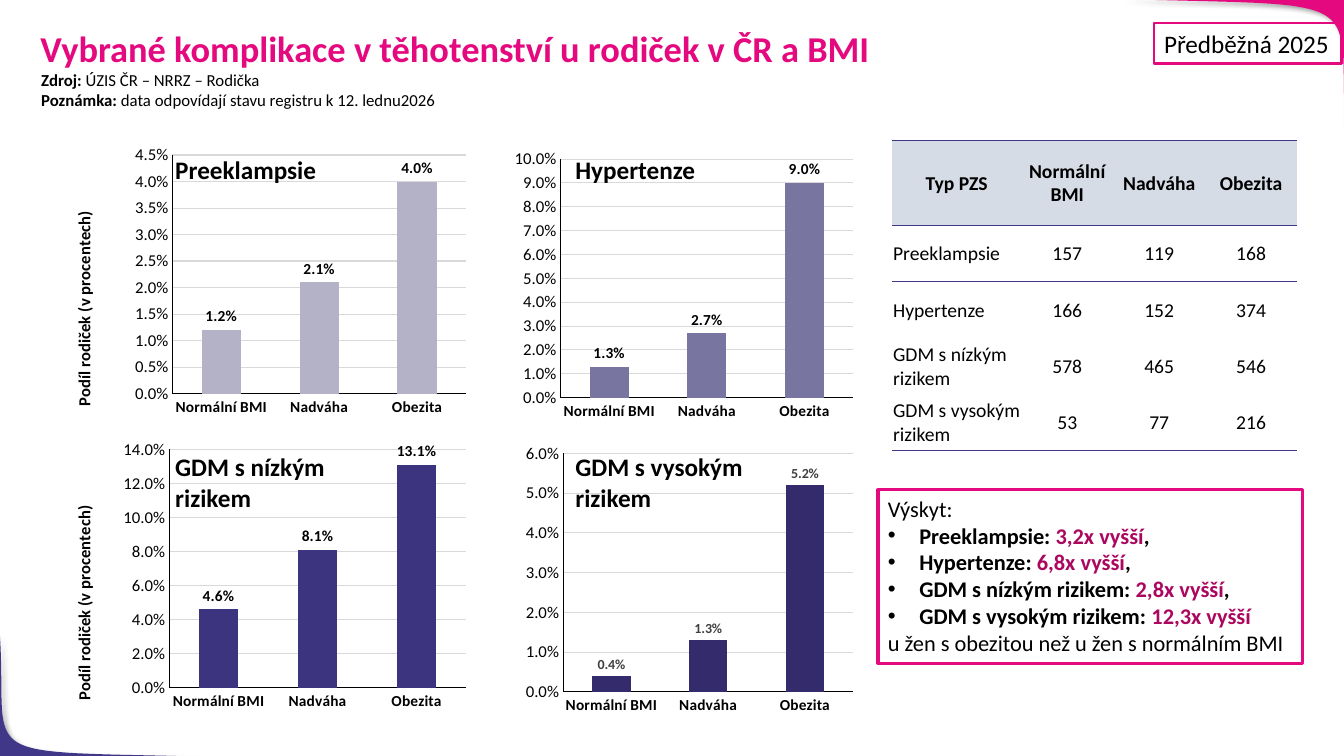
from lxml import etree
from pptx import Presentation
from pptx.chart.data import CategoryChartData
from pptx.dml.color import RGBColor
from pptx.enum.chart import XL_CHART_TYPE, XL_LABEL_POSITION, XL_TICK_MARK
from pptx.enum.shapes import MSO_SHAPE
from pptx.enum.text import MSO_ANCHOR, MSO_AUTO_SIZE, PP_ALIGN
from pptx.oxml import parse_xml
from pptx.oxml.ns import nsdecls, qn
from pptx.util import Pt

FONT = "Calibri"
BLACK, PINK, DARK_PINK, PURPLE = "000000", "E5097F", "AC075F", "413789"
HEADER_FILL, GRID_GREY = "D6DCE5", "D9D9D9"
CATEGORIES = ["Normální BMI", "Nadváha", "Obezita"]


def color(hex_value):
    return RGBColor.from_string(hex_value)


def style_font(font, size, hex_value=BLACK, bold=False):
    font.name, font.size, font.bold = FONT, Pt(size), bold
    font.color.rgb = color(hex_value)


def style_line(line, hex_value, width):
    line.color.rgb = color(hex_value)
    line.width = Pt(width)


def manual_layout(**settings):
    items = "".join(f'<c:{key} val="{value}"/>' for key, value in settings.items())
    return parse_xml(f'<c:layout {nsdecls("c")}><c:manualLayout>{items}'
                     '</c:manualLayout></c:layout>')


def replace_layout(parent, layout, index):
    for old_layout in parent.findall(qn("c:layout")):
        parent.remove(old_layout)
    parent.insert(index, layout)


def curve_points(start, control_1, control_2, end, steps=40):
    for step in range(1, steps + 1):
        t = step / steps
        weights = ((1 - t) ** 3, 3 * t * (1 - t) ** 2, 3 * t * t * (1 - t), t ** 3)
        yield tuple(Pt(sum(weight * point[axis] for weight, point in
                           zip(weights, (start, control_1, control_2, end))))
                    for axis in (0, 1))


class SlideBuilder:
    def __init__(self, presentation):
        self.slide = presentation.slides.add_slide(presentation.slide_layouts[5])
        self.shapes = self.slide.shapes

    def corner(self, curve, corner_point, fill):
        start = curve[0]
        builder = self.shapes.build_freeform(Pt(start[0]), Pt(start[1]))
        builder.add_line_segments(
            [*curve_points(*curve), tuple(Pt(value) for value in corner_point)])
        shape = builder.convert_to_shape()
        shape.fill.solid()
        shape.fill.fore_color.rgb = color(fill)
        shape.line.fill.background()
        shape.shadow.inherit = False
        effects = shape.element.spPr.find(qn("a:effectLst"))
        effects.append(parse_xml(
            f'<a:outerShdw {nsdecls("a")} blurRad="{Pt(4)}" dist="{Pt(3)}" dir="2700000">'
            '<a:srgbClr val="000000"><a:alpha val="40000"/></a:srgbClr></a:outerShdw>'))

    def title(self, box, text):
        title = self.shapes.title
        title.left, title.top, title.width, title.height = map(Pt, box)
        frame = title.text_frame
        frame.text = text
        frame.word_wrap = True
        frame.auto_size = MSO_AUTO_SIZE.NONE
        frame.vertical_anchor = MSO_ANCHOR.TOP
        paragraph = frame.paragraphs[0]
        paragraph.alignment = PP_ALIGN.LEFT
        paragraph.line_spacing = 0.9
        style_font(paragraph.runs[0].font, 26, PINK, True)

    def text(self, box, paragraphs, size, outline=None, wrap=True, bullets=()):
        """Each paragraph is a list of (text, bold, colour) runs."""
        if outline:
            shape = self.shapes.add_shape(MSO_SHAPE.RECTANGLE, *map(Pt, box))
            shape.shadow.inherit = False
            shape.fill.background()
            style_line(shape.line, PINK, outline)
        else:
            shape = self.shapes.add_textbox(*map(Pt, box))
        frame = shape.text_frame
        frame.word_wrap = wrap
        frame.auto_size = MSO_AUTO_SIZE.SHAPE_TO_FIT_TEXT
        frame.vertical_anchor = MSO_ANCHOR.TOP
        for index, runs in enumerate(paragraphs):
            paragraph = frame.add_paragraph() if index else frame.paragraphs[0]
            paragraph.alignment = PP_ALIGN.LEFT
            if index in bullets:
                properties = paragraph._p.get_or_add_pPr()
                properties.set("marL", str(Pt(22.5)))
                properties.set("indent", str(-Pt(22.5)))
                etree.SubElement(properties, qn("a:buFont"), typeface="Arial")
                etree.SubElement(properties, qn("a:buChar"), char="•")
            for content, bold, hex_value in runs:
                run = paragraph.add_run()
                run.text = content
                style_font(run.font, size, hex_value, bold)

    def chart(self, box, values, fill, maximum, step, plot_left, label_style, axis_title):
        data = CategoryChartData(number_format="0.0%")
        data.categories = CATEGORIES
        data.add_series("Series 1", values)
        chart = self.shapes.add_chart(
            XL_CHART_TYPE.COLUMN_CLUSTERED, *map(Pt, box), data).chart
        chart.has_legend = chart.has_title = False
        style_font(chart.font, 10)

        # Columns and their labels
        plot = chart.plots[0]
        plot.gap_width = 150
        plot.vary_by_categories = False
        series_fill = plot.series[0].format.fill
        series_fill.solid()
        series_fill.fore_color.rgb = color(fill)
        plot.has_data_labels = True
        labels = plot.data_labels
        labels.show_value = True
        labels.number_format, labels.number_format_is_linked = "0.0%", False
        labels.position = XL_LABEL_POSITION.OUTSIDE_END
        style_font(labels.font, *label_style, True)

        # Axes
        value_axis, category_axis = chart.value_axis, chart.category_axis
        for axis, size, bold in ((value_axis, 12, False), (category_axis, 11, True)):
            axis.major_tick_mark = axis.minor_tick_mark = XL_TICK_MARK.NONE
            style_font(axis.tick_labels.font, size, BLACK, bold)
            style_line(axis.format.line, BLACK, 0.75)
        value_axis.minimum_scale, value_axis.maximum_scale = 0, maximum
        value_axis.major_unit = step
        value_axis.tick_labels.number_format = "0.0%"
        value_axis.tick_labels.number_format_is_linked = False
        value_axis.has_major_gridlines = True
        style_line(value_axis.major_gridlines.format.line, GRID_GREY, 0.75)
        if axis_title:
            frame = value_axis.axis_title.text_frame
            frame.text = axis_title
            style_font(frame.paragraphs[0].runs[0].font, 12, BLACK, True)
            frame._txBody.bodyPr.set("rot", "-5400000")
            frame._txBody.bodyPr.set("vert", "horz")
            replace_layout(value_axis.axis_title._element, manual_layout(
                xMode="edge", yMode="edge", x=0.02, y=0.21), 1)
        replace_layout(chart._chartSpace.chart.plotArea, manual_layout(
            layoutTarget="inner", xMode="edge", yMode="edge",
            x=plot_left, y=0.023, w=1 - plot_left, h=0.811), 0)

    def table(self, box, rows, widths, heights, ruled_edges):
        table = self.shapes.add_table(len(rows), len(widths), *map(Pt, box)).table
        table.first_row = table.horz_banding = False
        for column, width in zip(table.columns, widths):
            column.width = Pt(width)
        for row_index, (row, height) in enumerate(zip(rows, heights)):
            table.rows[row_index].height = Pt(height)
            for column_index, content in enumerate(row):
                cell = table.cell(row_index, column_index)
                cell.margin_left = cell.margin_right = cell.margin_top = Pt(0.72)
                cell.margin_bottom = 0
                cell.vertical_anchor = MSO_ANCHOR.MIDDLE
                cell.text = content
                paragraph = cell.text_frame.paragraphs[0]
                is_header = row_index == 0
                is_label = column_index == 0 and not is_header
                paragraph.alignment = PP_ALIGN.LEFT if is_label else PP_ALIGN.CENTER
                style_font(paragraph.runs[0].font, 14, BLACK, is_header)
                if is_header:
                    cell.fill.solid()
                    cell.fill.fore_color.rgb = color(HEADER_FILL)
                else:
                    cell.fill.background()
                ruled = {"T": row_index in ruled_edges, "B": row_index + 1 in ruled_edges}
                for position, side in enumerate("LRTB"):
                    paint = (f'<a:solidFill><a:srgbClr val="{PURPLE}"/></a:solidFill>'
                             if ruled.get(side) else "<a:noFill/>")
                    cell._tc.get_or_add_tcPr().insert(position, parse_xml(
                        f'<a:ln{side} {nsdecls("a")} w="{Pt(1)}">{paint}</a:ln{side}>'))


def main():
    presentation = Presentation()
    presentation.slide_width, presentation.slide_height = Pt(960), Pt(540)
    builder = SlideBuilder(presentation)

    # Corner decorations
    builder.corner([(153.4, 540.7), (-24.5, 535.7), (5.8, 546.5), (0, 453.6)],
                   (-0.7, 540.7), PURPLE)
    builder.corner([(799.9, -0.7), (986.4, 5), (954.7, -7.2), (961.2, 102.2)],
                   (961.2, -0.7), PINK)

    # Heading, source note and status badge
    builder.title((21.6, 18.7, 872.6, 43.2),
                  "Vybrané komplikace v těhotenství u rodiček v ČR a BMI")
    builder.text((22.3, 46.1, 298.8, 36), [
        [("Zdroj: ", True, BLACK), ("ÚZIS ČR – NRRZ – Rodička", False, BLACK)],
        [("Poznámka: ", True, BLACK),
         ("data odpovídají stavu registru k 12. lednu2026", False, BLACK)],
    ], 12, wrap=False)
    builder.text((824.4, 16.6, 133.9, 28.8), [[("Předběžná 2025", False, BLACK)]], 18,
                 outline=1.5, wrap=False)

    # Two by two grid of charts, each with its heading
    complications = [
        ("Preeklampsie", [0.012, 0.021, 0.04], "B3B2C6", 0.045, 0.005, 0.274, 131.8),
        ("Hypertenze", [0.013, 0.027, 0.09], "7875A1", 0.1, 0.01, 0.222, 269.3),
        ("GDM s nízkým rizikem", [0.046, 0.081, 0.131], "3D3480", 0.14, 0.02, 0.266, 131.8),
        ("GDM s vysokým rizikem", [0.004, 0.013, 0.052], "332B6C", 0.06, 0.01, 0.229, 134.6),
    ]
    chart_columns = [(43.9, 289.4, 118.1), (340.6, 269.3, 403.9)]
    for index, (name, values, fill, maximum, step, plot_left, width) in enumerate(complications):
        row, column = divmod(index, 2)
        chart_left, chart_width, heading_left = chart_columns[column]
        builder.chart((chart_left, 103.7 + 210.2 * row + 2.9 * column, chart_width, 212.4),
                      values, fill, maximum, step, plot_left,
                      (10, "404040") if index == 3 else (11, BLACK),
                      None if column else "Podíl rodiček (v procentech)")
        builder.text((heading_left, 106.6 + 212.4 * row, width, 28.8 + 22.3 * row),
                     [[(name, True, BLACK)]], 18)

    # Table of counts
    counts = [("157", "119", "168"), ("166", "152", "374"),
              ("578", "465", "546"), ("53", "77", "216")]
    names = [complication[0] for complication in complications]
    rows = [("Typ PZS", *CATEGORIES)]
    rows += [(name, *numbers) for name, numbers in zip(names, counts)]
    builder.table((637.2, 100.1, 289.4, 221.8), rows, [92.3] + [65.7] * 3,
                  [61] + [40.2] * 4, ruled_edges={0, 1, 2, 5})

    # Summary of relative occurrence
    ratios = ["3,2x", "6,8x", "2,8x", "12,3x"]
    summary = [[(f"{name}: ", True, BLACK), (f"{ratio} vyšší", True, DARK_PINK)]
               for name, ratio in zip(names, ratios)]
    for runs in summary[:-1]:
        runs.append((",", True, BLACK))
    builder.text((627.1, 349.9, 303.1, 123.8), [
        [("Výskyt:", False, BLACK)],
        *summary,
        [("u žen s obezitou než u žen s normálním BMI", False, BLACK)],
    ], 16, outline=2.25, bullets=range(1, 5))

    presentation.save("out.pptx")


if __name__ == "__main__":
    main()
